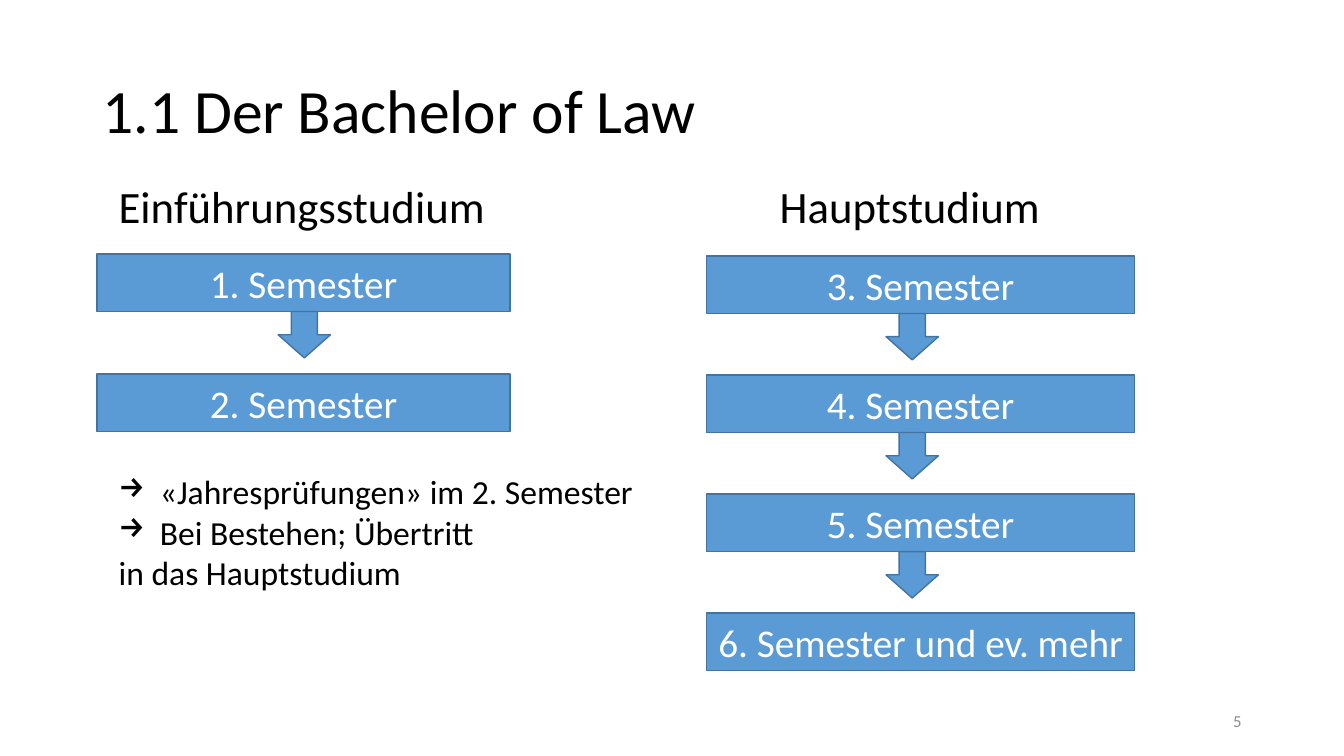
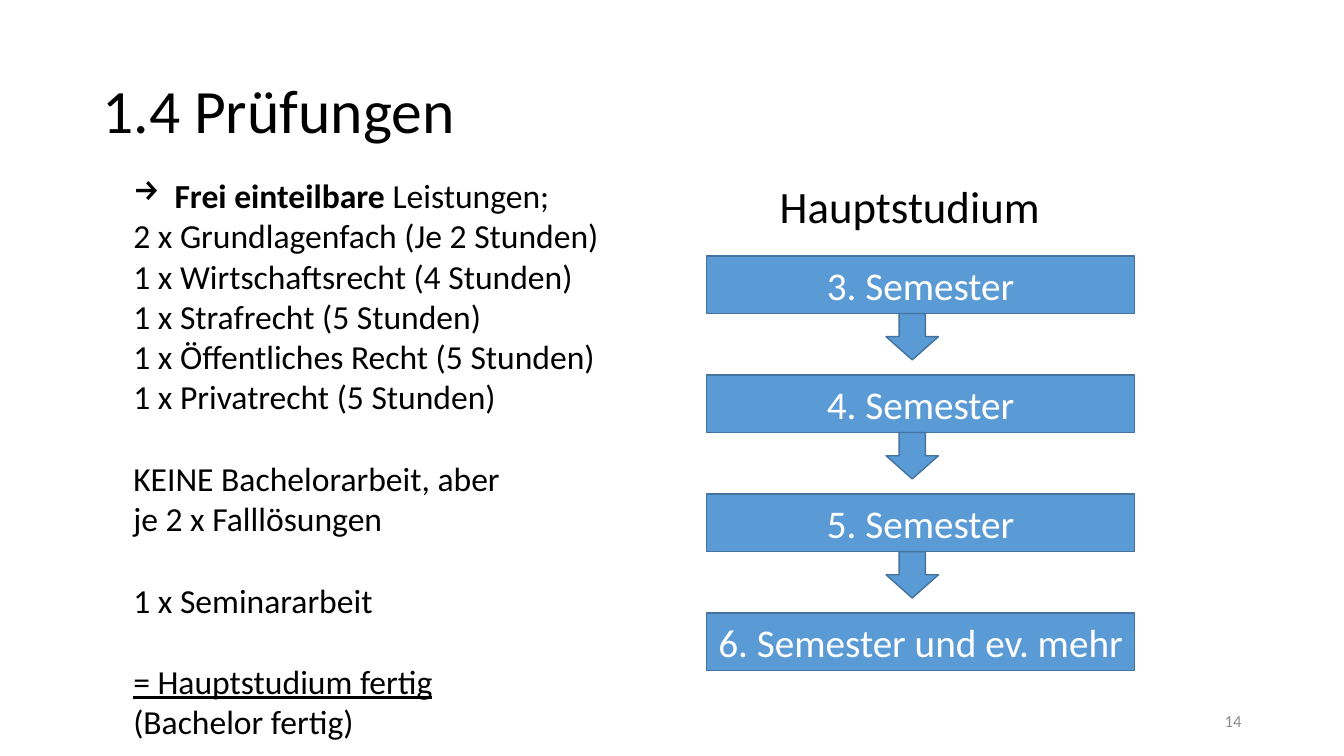
from dataclasses import dataclass

from lxml.etree import SubElement
from pptx import Presentation
from pptx.dml.color import RGBColor
from pptx.enum.shapes import MSO_SHAPE as Preset
from pptx.enum.text import MSO_ANCHOR as Anchor, PP_ALIGN as Align
from pptx.oxml.ns import qn
from pptx.shapes.autoshape import Shape
from pptx.slide import Slide
from pptx.util import Cm, Pt

COLORS = {
    "text": "000000",
    "box": "5B9BD5",
    "outline": "43739E",
    "box_text": "FFFFFF",
    "page_number": "8C8C8C",
}
FONT = "Calibri"
BOX_HEIGHT = 1.45
ARROW_WIDTH, ARROW_HEIGHT = 1.32, 1.17
BULLET_INDENT = 1.04
REMARK_SIZE = 24
REMARK_GAP = 29.3


@dataclass(frozen=True)
class Area:
    """A rectangle in centimetres."""
    left: float
    top: float
    width: float
    height: float


@dataclass(frozen=True)
class Column:
    heading: str
    heading_area: Area
    left: float
    top: float
    width: float
    pitch: float
    arrow_center: float
    semesters: tuple[str, ...]


@dataclass(frozen=True)
class Remark:
    text: str
    bold_start: str = ""
    bullet: bool = False
    underline: bool = False
    gap_before: bool = False


@dataclass(frozen=True)
class Page:
    title: str
    number: int
    columns: tuple[Column, ...]
    remark_area: Area
    remarks: tuple[Remark, ...]


TITLE_AREA = Area(2.33, 1.01, 29.21, 3.68)
NUMBER_AREA = Area(23.92, 17.65, 7.62, 1.01)

INTRODUCTORY = Column(
    "Einführungsstudium", Area(2.74, 4.37, 9.85, 1.62),
    2.45, 6.4, 10.4, 3.03, 7.67,
    ("1. Semester", "2. Semester"),
)
MAIN = Column(
    "Hauptstudium", Area(19.4, 4.38, 7.13, 1.62),
    17.8, 6.45, 10.8, 3, 22.99,
    ("3. Semester", "4. Semester", "5. Semester", "6. Semester und ev. mehr"),
)

PAGES = (
    Page(
        "1.1 Der Bachelor of Law", 5, (INTRODUCTORY, MAIN),
        Area(2.74, 11.75, 13.6, 4.11),
        (
            Remark("«Jahresprüfungen» im 2. Semester", bullet=True),
            Remark("Bei Bestehen; Übertritt", bullet=True),
            Remark("in das Hauptstudium"),
        ),
    ),
    Page(
        "1.4 Prüfungen", 14, (MAIN,),
        Area(3.11, 4.28, 13.28, 15.4),
        (
            Remark("Leistungen;", bold_start="Frei einteilbare ", bullet=True),
            Remark("2 x Grundlagenfach (Je 2 Stunden)"),
            Remark("1 x Wirtschaftsrecht (4 Stunden)"),
            Remark("1 x Strafrecht (5 Stunden)"),
            Remark("1 x Öffentliches Recht (5 Stunden)"),
            Remark("1 x Privatrecht (5 Stunden)"),
            Remark("KEINE Bachelorarbeit, aber", gap_before=True),
            Remark("je 2 x Falllösungen"),
            Remark("1 x Seminararbeit", gap_before=True),
            Remark("= Hauptstudium fertig", underline=True, gap_before=True),
            Remark("(Bachelor fertig)"),
        ),
    ),
)


def color(name: str) -> RGBColor:
    return RGBColor.from_string(COLORS[name])


def lengths(area: Area) -> tuple[Cm, Cm, Cm, Cm]:
    return Cm(area.left), Cm(area.top), Cm(area.width), Cm(area.height)


def style_paragraph(paragraph, size: float, color_name: str = "text") -> None:
    font = paragraph.font
    font.name = FONT
    font.size = Pt(size)
    font.color.rgb = color(color_name)


def add_label(slide: Slide, area: Area, text: str, size: float,
              color_name: str = "text", align: Align = Align.LEFT,
              anchor: Anchor = Anchor.TOP, wrap: bool = True):
    """Add one line of text and return its paragraph."""
    frame = slide.shapes.add_textbox(*lengths(area)).text_frame
    frame.word_wrap = wrap
    frame.vertical_anchor = anchor
    paragraph = frame.paragraphs[0]
    paragraph.text = text
    paragraph.alignment = align
    style_paragraph(paragraph, size, color_name)
    return paragraph


def add_filled_shape(slide: Slide, preset: Preset, area: Area) -> Shape:
    shape = slide.shapes.add_shape(preset, *lengths(area))
    shape.shadow.inherit = False
    shape.fill.solid()
    shape.fill.fore_color.rgb = color("box")
    shape.line.color.rgb = color("outline")
    shape.line.width = Pt(1)
    return shape


def add_column(slide: Slide, column: Column) -> None:
    """Draw a heading and its semesters, with an arrow between neighbours."""
    add_label(slide, column.heading_area, column.heading, 32, wrap=False)
    for index, semester in enumerate(column.semesters):
        top = column.top + index * column.pitch
        box = add_filled_shape(
            slide, Preset.RECTANGLE,
            Area(column.left, top, column.width, BOX_HEIGHT))
        box.text_frame.word_wrap = True
        box.text_frame.vertical_anchor = Anchor.MIDDLE
        paragraph = box.text_frame.paragraphs[0]
        paragraph.text = semester
        paragraph.alignment = Align.CENTER
        style_paragraph(paragraph, 28, "box_text")
        if index < len(column.semesters) - 1:
            add_filled_shape(
                slide, Preset.DOWN_ARROW,
                Area(column.arrow_center - ARROW_WIDTH / 2, top + BOX_HEIGHT,
                     ARROW_WIDTH, ARROW_HEIGHT))


def add_arrow_bullet(paragraph) -> None:
    properties = paragraph._p.get_or_add_pPr()
    properties.set("marL", str(int(Cm(BULLET_INDENT))))
    properties.set("indent", str(-int(Cm(BULLET_INDENT))))
    SubElement(properties, qn("a:buChar")).set("char", "→")


def add_remarks(slide: Slide, area: Area, remarks: tuple[Remark, ...]) -> None:
    frame = slide.shapes.add_textbox(*lengths(area)).text_frame
    frame.word_wrap = True
    for index, remark in enumerate(remarks):
        paragraph = frame.add_paragraph() if index else frame.paragraphs[0]
        if remark.bullet:
            add_arrow_bullet(paragraph)
        if remark.gap_before:
            paragraph.space_before = Pt(REMARK_GAP)
        if remark.bold_start:
            run = paragraph.add_run()
            run.text = remark.bold_start
            run.font.bold = True
        paragraph.add_run().text = remark.text
        style_paragraph(paragraph, REMARK_SIZE)
        if remark.underline:
            paragraph.font.underline = True


def add_page(presentation, page: Page) -> None:
    slide = presentation.slides.add_slide(presentation.slide_layouts[6])
    title = add_label(slide, TITLE_AREA, page.title, 44, anchor=Anchor.MIDDLE)
    title.line_spacing = 0.9
    for column in page.columns:
        add_column(slide, column)
    add_remarks(slide, page.remark_area, page.remarks)
    add_label(slide, NUMBER_AREA, str(page.number), 12, "page_number",
              Align.RIGHT, Anchor.MIDDLE)


def main() -> None:
    presentation = Presentation()
    presentation.slide_width = Cm(33.87)
    presentation.slide_height = Cm(19.05)
    for page in PAGES:
        add_page(presentation, page)
    presentation.save("out.pptx")


if __name__ == "__main__":
    main()
